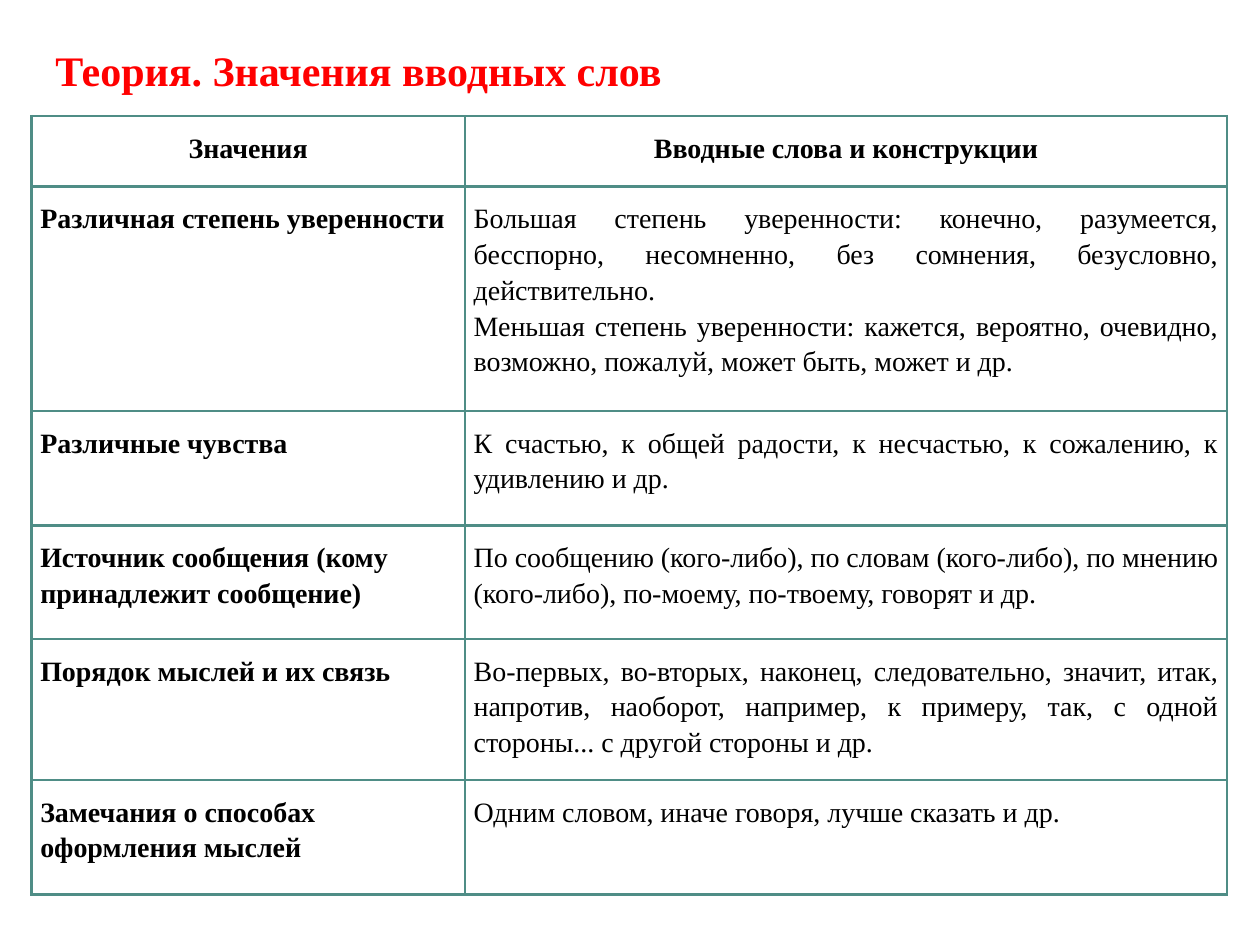
from lxml import etree
from pptx import Presentation
from pptx.dml.color import RGBColor
from pptx.enum.text import MSO_ANCHOR, PP_ALIGN
from pptx.oxml.ns import qn
from pptx.util import Inches, Pt

LEFT, CENTER, JUSTIFY = PP_ALIGN.LEFT, PP_ALIGN.CENTER, PP_ALIGN.JUSTIFY
TOP = MSO_ANCHOR.TOP
FONT = "Times New Roman"
COLORS = {"title": "FF0000", "text": "000000", "border": "4F8D86"}

COL_WIDTHS = [3.44, 6.05]
ROW_HEIGHTS = [0.56, 1.78, 0.91, 0.9, 1.06, 0.91]
ROWS = [
    ("Значения", "Вводные слова и конструкции"),
    ("Различная степень уверенности",
     "Большая степень уверенности: конечно, разумеется, бесспорно, "
     "несомненно, без сомнения, безусловно, действительно.\n"
     "Меньшая степень уверенности: кажется, вероятно, очевидно, возможно, "
     "пожалуй, может быть, может и др."),
    ("Различные чувства",
     "К счастью, к общей радости, к несчастью, к сожалению, к удивлению и др."),
    ("Источник сообщения (кому принадлежит сообщение)",
     "По сообщению (кого-либо), по словам (кого-либо), по мнению (кого-либо), "
     "по-моему, по-твоему, говорят и др."),
    ("Порядок мыслей и их связь",
     "Во-первых, во-вторых, наконец, следовательно, значит, итак, напротив, "
     "наоборот, например, к примеру, так, с одной стороны... с другой стороны и др."),
    ("Замечания о способах оформления мыслей",
     "Одним словом, иначе говоря, лучше сказать и др."),
]


def set_font(p, size, color, bold):
    p.font.name = FONT
    p.font.size = Pt(size)
    p.font.bold = bold
    p.font.color.rgb = RGBColor.from_string(COLORS[color])


def set_borders(cell):
    tcPr = cell._tc.get_or_add_tcPr()
    for i, side in enumerate(("a:lnL", "a:lnR", "a:lnT", "a:lnB")):
        ln = etree.Element(qn(side), w=str(Pt(1.5)))
        fill = etree.SubElement(ln, qn("a:solidFill"))
        etree.SubElement(fill, qn("a:srgbClr"), val=COLORS["border"])
        tcPr.insert(i, ln)


prs = Presentation()
prs.slide_width, prs.slide_height = Inches(10), Inches(7.5)
s = prs.slides.add_slide(prs.slide_layouts[6])

title = s.shapes.add_textbox(Inches(0.34), Inches(0.21), Inches(9.32), Inches(0.83))
tf = title.text_frame
tf.word_wrap = True
tf.vertical_anchor = TOP
tf.margin_left = tf.margin_right = tf.margin_bottom = Inches(0.1)
tf.margin_top = Inches(0.14)
p = tf.paragraphs[0]
p.text = "Теория. Значения вводных слов"
set_font(p, 24, "title", True)

frame = s.shapes.add_table(len(ROWS), len(COL_WIDTHS), Inches(0.25), Inches(0.92),
                           Inches(sum(COL_WIDTHS)), Inches(sum(ROW_HEIGHTS)))
table = frame.table
table.horz_banding = False
for column, width in zip(table.columns, COL_WIDTHS):
    column.width = Inches(width)

for r, texts in enumerate(ROWS):
    table.rows[r].height = Inches(ROW_HEIGHTS[r])
    for c, text in enumerate(texts):
        cell = table.cell(r, c)
        cell.fill.background()
        cell.vertical_anchor = TOP
        cell.margin_left = cell.margin_right = Inches(0.07)
        cell.margin_top = cell.margin_bottom = Inches(0.1)
        set_borders(cell)
        cell.text_frame.text = text
        for p in cell.text_frame.paragraphs:
            p.alignment = CENTER if r == 0 else (LEFT, JUSTIFY)[c]
            p.line_spacing = 1.15
            set_font(p, 16, "text", r == 0 or c == 0)

prs.save("out.pptx")
